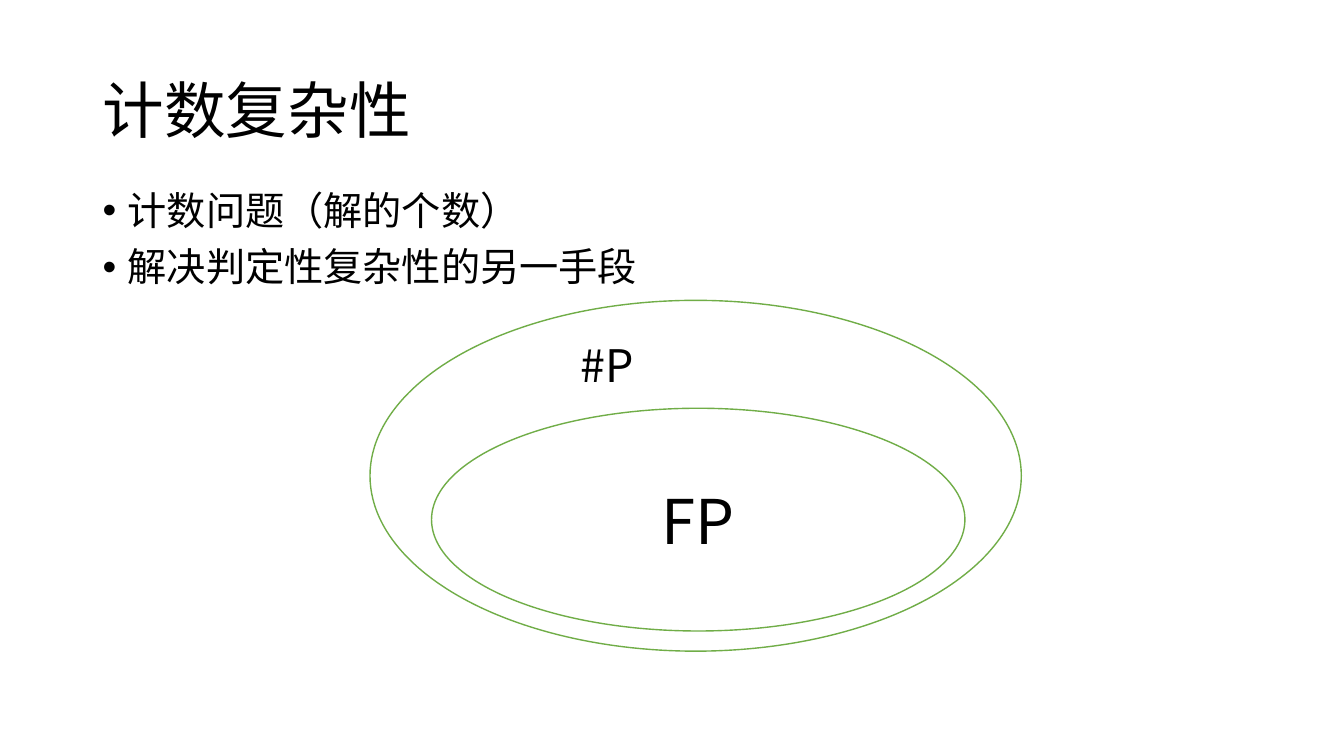
from lxml import etree
from pptx import Presentation
from pptx import util as u
from pptx.dml.color import RGBColor
from pptx.enum import shapes, text
from pptx.oxml.ns import qn

COLORS = {"ink": "000000", "paper": "FFFFFF", "outline": "70AD47"}
FONT = "Noto Sans CJK SC"


def style_paragraph(paragraph, size):
    """Give every run of a paragraph the slide font, size and colour."""
    for run in paragraph.runs:
        run.font.size = u.Pt(size)
        run.font.name = FONT
        run.font.color.rgb = RGBColor.from_string(COLORS["ink"])
        east_asian = etree.SubElement(run.font._element, qn("a:ea"))
        east_asian.set("typeface", FONT)


def add_text(slide, box, content, size, anchor=text.MSO_ANCHOR.TOP):
    """Add a wrapping text box and return its text frame."""
    frame = slide.shapes.add_textbox(*map(u.Inches, box)).text_frame
    frame.word_wrap = True
    frame.vertical_anchor = anchor
    frame.text = content
    for paragraph in frame.paragraphs:
        style_paragraph(paragraph, size)
    return frame


def add_title(slide, box):
    """Place the slide title, centred vertically in its box."""
    frame = add_text(slide, box, "计数复杂性", 44, text.MSO_ANCHOR.MIDDLE)
    frame.paragraphs[0].line_spacing = 0.9


def add_bullets(slide, box):
    """Place the bulleted statements."""
    statements = ["计数问题（解的个数）", "解决判定性复杂性的另一手段"]
    frame = add_text(slide, box, "\n".join(statements), 28)
    for paragraph in frame.paragraphs:
        paragraph.line_spacing = 0.9
        paragraph.space_before = u.Pt(10)
        properties = paragraph._p.get_or_add_pPr()
        properties.set("marL", str(u.Inches(0.25)))
        properties.set("indent", str(u.Inches(-0.25)))
        etree.SubElement(properties, qn("a:buFont")).set("typeface", "Arial")
        etree.SubElement(properties, qn("a:buChar")).set("char", "•")


def add_ellipse(slide, box):
    """Draw an outlined ellipse for one complexity class."""
    shape = slide.shapes.add_shape(shapes.MSO_SHAPE.OVAL, *map(u.Inches, box))
    shape.shadow.inherit = False
    shape.fill.solid()
    shape.fill.fore_color.rgb = RGBColor.from_string(COLORS["paper"])
    shape.line.color.rgb = RGBColor.from_string(COLORS["outline"])
    shape.line.width = u.Pt(1)
    return shape


def add_class_diagram(slide, box):
    """Nest the FP ellipse inside the #P ellipse that fills the box."""
    left, top, width, height = box
    add_ellipse(slide, box)
    inner = add_ellipse(slide, (left + 0.61, top + 1.07, width - 1.17, height - 1.27))
    inner.text_frame.vertical_anchor = text.MSO_ANCHOR.MIDDLE
    inner.text_frame.text = "FP"
    paragraph = inner.text_frame.paragraphs[0]
    paragraph.alignment = text.PP_ALIGN.CENTER
    style_paragraph(paragraph, 44)
    add_text(slide, (left + 1.99, top + 0.32, 2.92, 0.64), "#P", 32)


def main():
    """Build and save the slide."""
    presentation = Presentation()
    presentation.slide_width = u.Inches(13.33)
    presentation.slide_height = u.Inches(7.5)
    slide = presentation.slides.add_slide(presentation.slide_layouts[6])
    add_title(slide, (0.92, 0.4, 11.5, 1.45))
    add_bullets(slide, (0.92, 1.85, 11.5, 4.76))
    add_class_diagram(slide, (3.67, 2.98, 6.46, 3.48))
    presentation.save("out.pptx")


if __name__ == "__main__":
    main()
